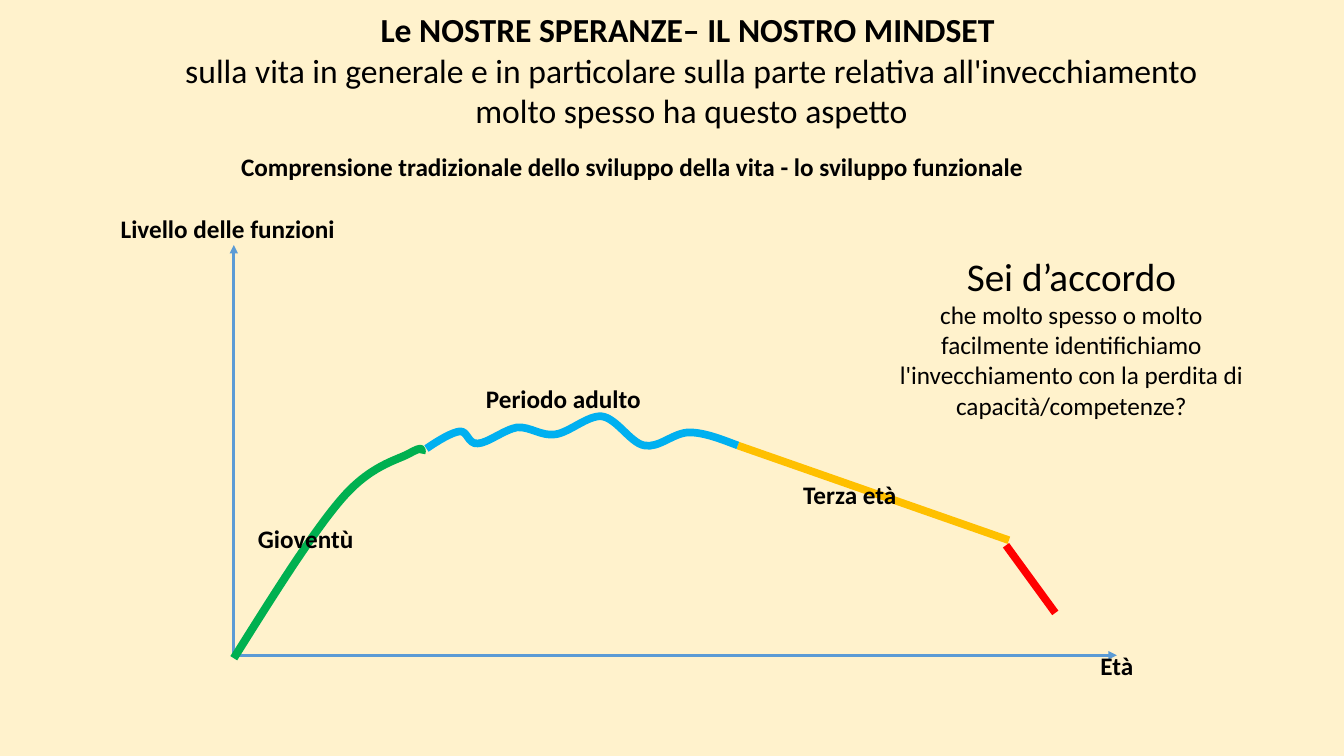
import pptx
import pptx.dml.color
import pptx.enum.shapes
import pptx.enum.text
import pptx.oxml
import pptx.oxml.ns
import pptx.util
from dataclasses import dataclass

Pt = pptx.util.Pt
RGB = pptx.dml.color.RGBColor.from_string
qn = pptx.oxml.ns.qn
MSO = pptx.enum.text


@dataclass(frozen=True)
class Theme:
    font: str = "Calibri"
    background: str = "FFF2CC"
    text: str = "000000"
    axis: str = "5B9BD5"
    youth: str = "00B050"
    adult: str = "00B0F0"
    third_age: str = "FFC000"
    decline: str = "FF0000"
    title: int = 24
    question: int = 28
    body: int = 18


theme = Theme()


def write(sp, lines, anchor, auto_size):
    tf = sp.text_frame
    tf.word_wrap = True
    tf.auto_size = auto_size
    tf.vertical_anchor = anchor
    for i, (text, size, bold) in enumerate(lines):
        p = tf.paragraphs[0] if i == 0 else tf.add_paragraph()
        p.text = text
        p.alignment = MSO.PP_ALIGN.CENTER
        p.space_before = Pt(0)
        p.font.name = theme.font
        p.font.size = Pt(size)
        p.font.bold = bold
        p.font.color.rgb = RGB(theme.text)


prs = pptx.Presentation()
prs.slide_width, prs.slide_height = Pt(960), Pt(540)
s = prs.slides.add_slide(prs.slide_layouts[5])
s.background.fill.solid()
s.background.fill.fore_color.rgb = RGB(theme.background)

title = s.shapes.title
title.left, title.top, title.width, title.height = Pt(27.4), Pt(2.2), Pt(933), Pt(95)
write(title, [
    ("Le NOSTRE SPERANZE– IL NOSTRO MINDSET ", theme.title, True),
    ("sulla vita in generale e in particolare sulla parte relativa all'invecchiamento", theme.title, False),
    ("molto spesso ha questo aspetto", theme.title, False),
], MSO.MSO_ANCHOR.MIDDLE, MSO.MSO_AUTO_SIZE.NONE)

origin = (167, 468)
lines = [
    (origin, (167, 175), theme.axis, 2, True),
    (origin, (797.8, 468), theme.axis, 2, True),
    ((527, 318.2), (720.7, 385.9), theme.third_age, 5.5, False),
    ((718.6, 389.5), (753.8, 437.8), theme.decline, 5.5, False),
]
for start, end, color, width, arrow in lines:
    line = s.shapes.add_connector(
        pptx.enum.shapes.MSO_CONNECTOR.STRAIGHT, *map(Pt, start + end))
    line.line.color.rgb = RGB(color)
    line.line.width = Pt(width)
    if arrow:
        ln = line.line._get_or_add_ln()
        ln.append(pptx.oxml.parse_xml(
            '<a:tailEnd xmlns:a="http://schemas.openxmlformats.org/drawingml/2006/main" type="triangle"/>'))
    spPr = line._element.spPr
    spPr.append(spPr.makeelement(qn("a:effectLst"), {}))

curves = [
    (theme.youth, 5.75, [
        (167, 470.2),
        (195.1, 425.5), (222.5, 381.6), (243.4, 357.1),
        (264.2, 332.6), (283, 329), (292.3, 324),
        (302.4, 318.2), (301.7, 321.1), (301, 324),
    ]),
    (theme.adult, 5.5, [
        (304.6, 320.4),
        (313.2, 314.6), (322.6, 308.9), (328.3, 308.2),
        (334.1, 307.4), (334.1, 317.5), (341.3, 316.8),
        (347.8, 316.8), (360.7, 306.7), (369.4, 305.3),
        (378.7, 304.6), (386.6, 311.8), (396.7, 310.3),
        (406.8, 308.9), (419.8, 296.6), (429.8, 297.4),
        (440.6, 298.8), (450, 316.1), (460.1, 318.2),
        (470.9, 320.4), (481, 308.9), (492.5, 308.9),
        (503.3, 308.9), (515.5, 313.9), (527, 318.2),
    ]),
]
for color, width, points in curves:
    points = [(Pt(x), Pt(y)) for x, y in points]
    builder = s.shapes.build_freeform(*points[0])
    builder.add_line_segments(points[1:], close=False)
    curve = builder.convert_to_shape()
    curve.shadow.inherit = False
    curve.fill.background()
    curve.line.color.rgb = RGB(color)
    curve.line.width = Pt(width)
    segments = list(curve._element.iter(qn("a:lnTo")))
    for i in range(0, len(segments), 3):
        bezier = segments[i].makeelement(qn("a:cubicBezTo"), {})
        segments[i].addprevious(bezier)
        for segment in segments[i:i + 3]:
            bezier.append(segment[0])
            segment.getparent().remove(segment)

labels = [
    ("Livello delle funzioni", 77, 149, 171.4),
    ("Età", 712, 461, 171.4),
    ("Comprensione tradizionale dello sviluppo della vita - lo sviluppo funzionale", 46, 104.5, 811.4),
    ("Gioventù ", 98, 370, 244.8),
    ("Periodo adulto", 280, 270, 244.8),
    ("Terza età", 484.6, 339, 244.8),
]
for text, left, top, width in labels:
    label = s.shapes.add_textbox(Pt(left), Pt(top), Pt(width), Pt(29))
    write(label, [(text, theme.body, True)],
          MSO.MSO_ANCHOR.TOP, MSO.MSO_AUTO_SIZE.SHAPE_TO_FIT_TEXT)

question = s.shapes.add_textbox(Pt(624.2), Pt(175), Pt(282.2), Pt(130.3))
write(question, [
    ("Sei d’accordo", theme.question, False),
    ("che molto spesso o molto facilmente identifichiamo l'invecchiamento con la perdita di capacità/competenze?",
     theme.body, False),
], MSO.MSO_ANCHOR.MIDDLE, MSO.MSO_AUTO_SIZE.NONE)

prs.save("out.pptx")
